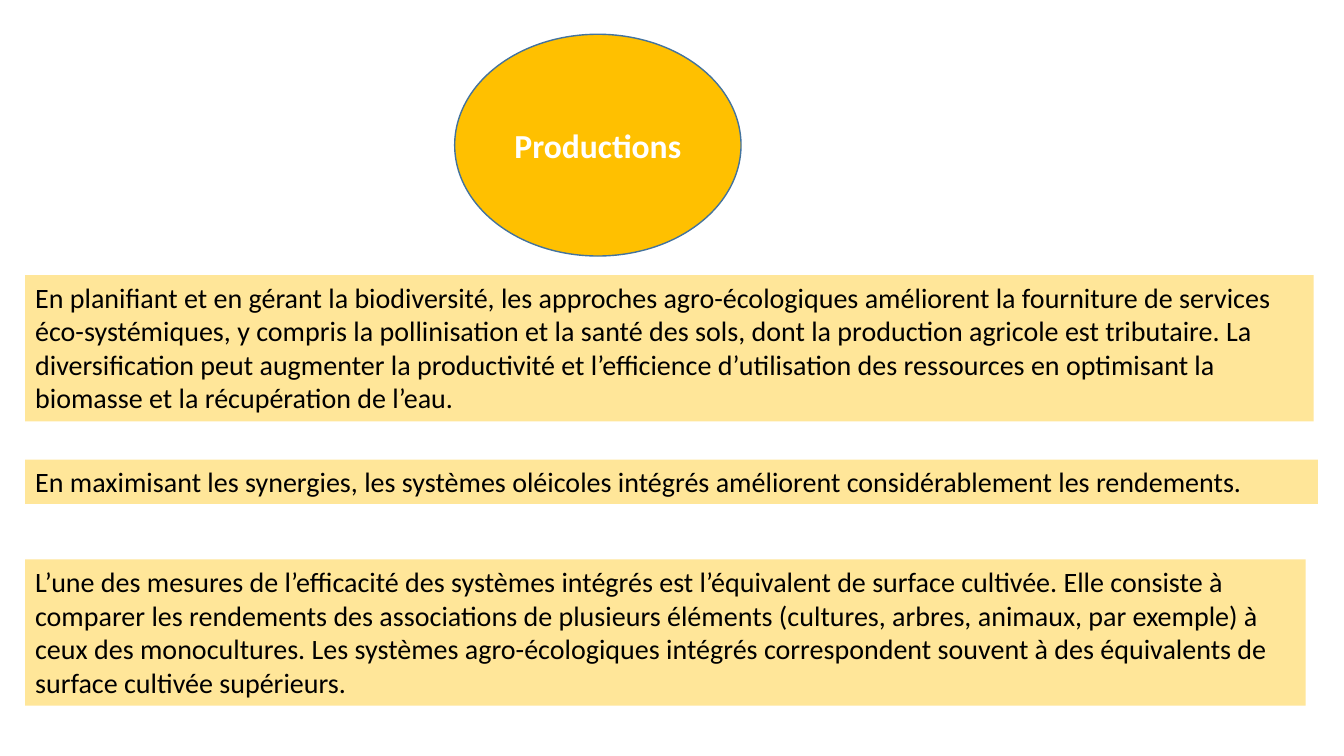
import pptx
import pptx.dml.color
import pptx.enum.shapes
import pptx.enum.text
import pptx.util

PX = 9144  # EMU per px, 100 px to the inch
FONT = "Calibri"
GOLD = pptx.dml.color.RGBColor(0xFF, 0xC0, 0x00)
PALE_GOLD = pptx.dml.color.RGBColor(0xFF, 0xE6, 0x99)
BLUE = pptx.dml.color.RGBColor(0x43, 0x73, 0x9E)
WHITE = pptx.dml.color.RGBColor(0xFF, 0xFF, 0xFF)
BLACK = pptx.dml.color.RGBColor(0x00, 0x00, 0x00)

PANEL_LEFT = 25
# Top, width, height and wording of each panel
PANELS = [
    (273, 1278, 145,
     "En planifiant et en gérant la biodiversité, les approches agro-écologiques "
     "améliorent la fourniture de services éco-systémiques, y compris la pollinisation "
     "et la santé des sols, dont la production agricole est tributaire. La "
     "diversification peut augmenter la productivité et l’efficience d’utilisation des "
     "ressources en optimisant la biomasse et la récupération de l’eau."),
    (456, 1282, 44,
     "En maximisant les synergies, les systèmes oléicoles intégrés améliorent "
     "considérablement les rendements."),
    (555, 1270, 145,
     "L’une des mesures de l’efficacité des systèmes intégrés est l’équivalent de "
     "surface cultivée. Elle consiste à comparer les rendements des associations de "
     "plusieurs éléments (cultures, arbres, animaux, par exemple) à ceux des "
     "monocultures. Les systèmes agro-écologiques intégrés correspondent souvent à des "
     "équivalents de surface cultivée supérieurs."),
]


def px(*lengths):
    return [pptx.util.Emu(length * PX) for length in lengths]


def write(box, wording, size, color, bold=False):
    box.text_frame.word_wrap = True
    para = box.text_frame.paragraphs[0]
    span = para.add_run()
    span.text = wording
    span.font.name = FONT
    span.font.size = pptx.util.Pt(size)
    span.font.bold = bold
    span.font.color.rgb = color
    return para


def add_heading_oval(page, left, top, width, height, wording):
    oval = page.shapes.add_shape(
        pptx.enum.shapes.MSO_SHAPE.OVAL, *px(left, top, width, height))
    oval.shadow.inherit = False
    oval.fill.solid()
    oval.fill.fore_color.rgb = GOLD
    oval.line.color.rgb = BLUE
    oval.line.width = pptx.util.Pt(1)
    oval.text_frame.vertical_anchor = pptx.enum.text.MSO_ANCHOR.MIDDLE
    para = write(oval, wording, 24, WHITE, bold=True)
    para.alignment = pptx.enum.text.PP_ALIGN.CENTER


def add_panel(page, top, width, height, wording):
    box = page.shapes.add_textbox(*px(PANEL_LEFT, top, width, height))
    box.fill.solid()
    box.fill.fore_color.rgb = PALE_GOLD
    write(box, wording, 20, BLACK)
    box.text_frame.auto_size = pptx.enum.text.MSO_AUTO_SIZE.SHAPE_TO_FIT_TEXT


def main():
    deck = pptx.Presentation()
    deck.slide_width, deck.slide_height = px(1333, 750)
    page = deck.slides.add_slide(deck.slide_layouts[6])

    # Heading
    add_heading_oval(page, 451, 34, 284, 220, "Productions")

    # Text panels
    for panel in PANELS:
        add_panel(page, *panel)

    deck.save("out.pptx")


if __name__ == "__main__":
    main()
